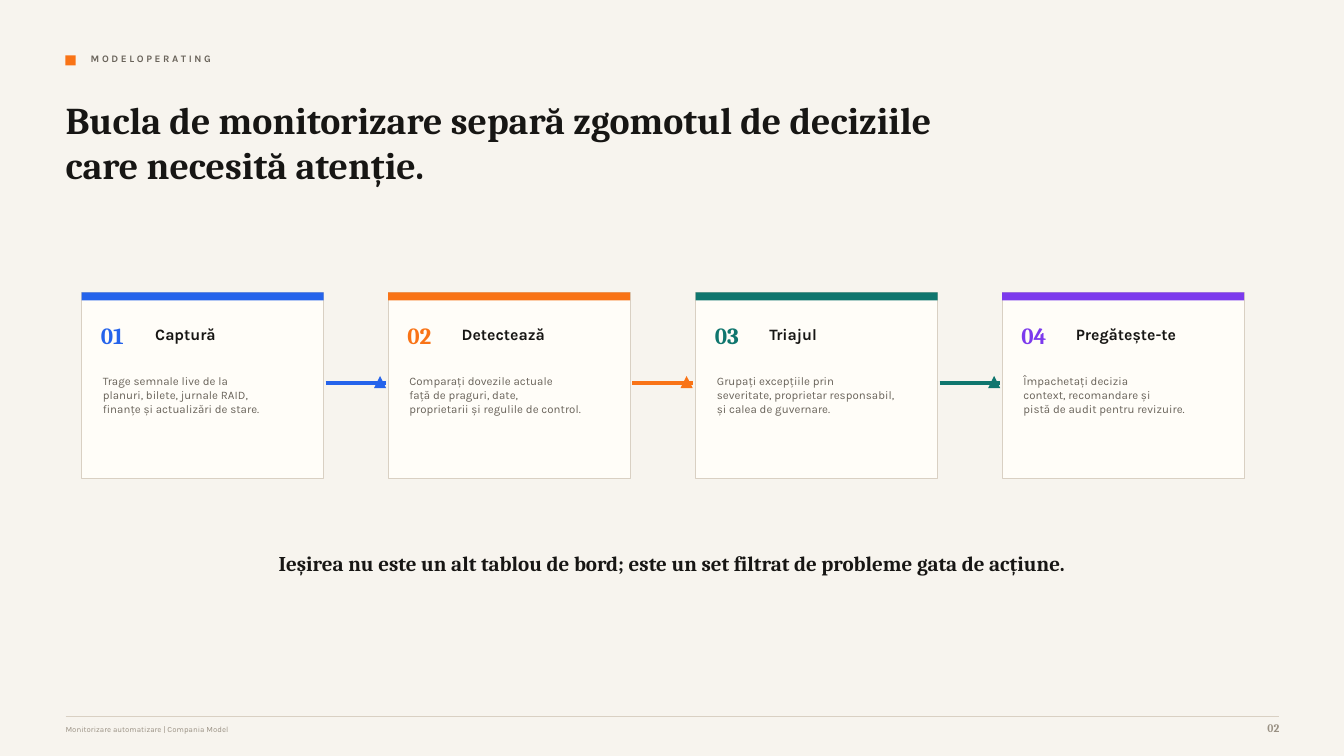
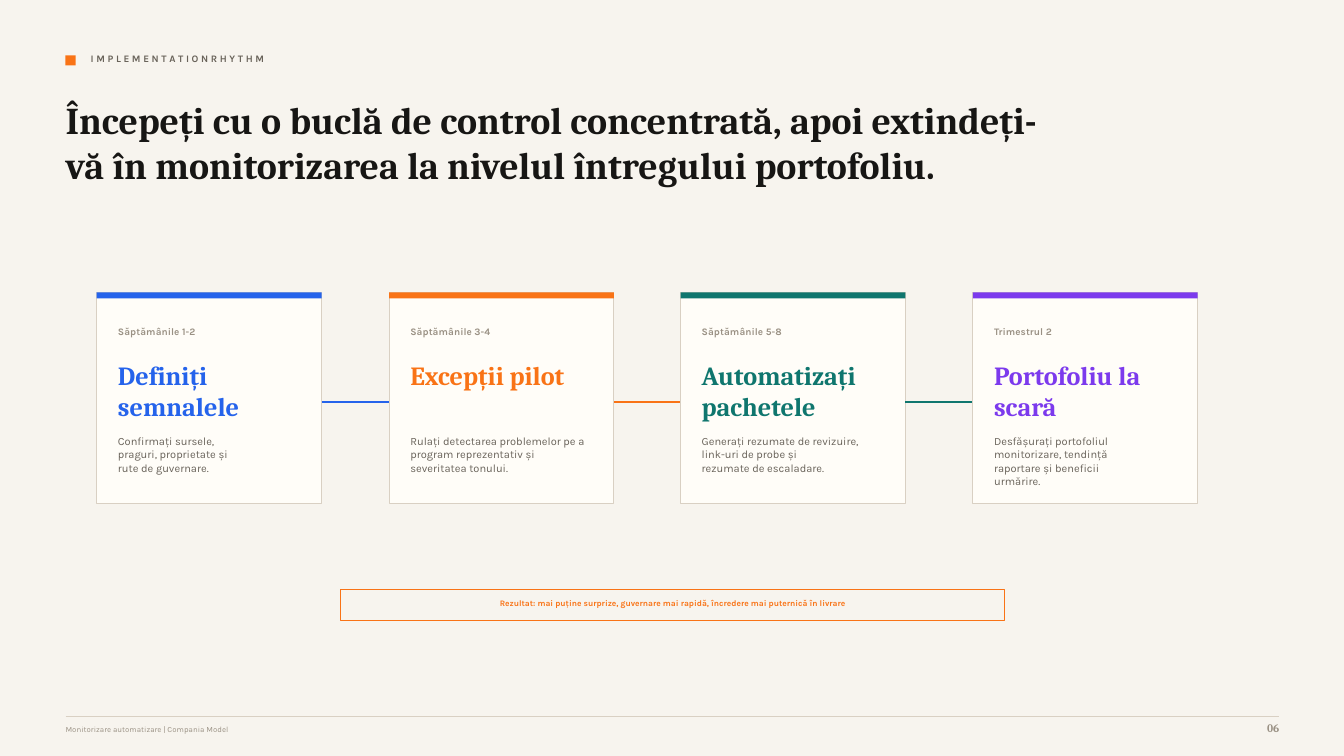
from dataclasses import dataclass

from lxml import etree
from pptx import Presentation
from pptx.dml.color import RGBColor
from pptx.enum.shapes import MSO_CONNECTOR, MSO_SHAPE
from pptx.enum.text import MSO_ANCHOR, MSO_AUTO_SIZE, PP_ALIGN
from pptx.oxml.ns import qn
from pptx.util import Emu, Pt

RECTANGLE, TRIANGLE = MSO_SHAPE.RECTANGLE, MSO_SHAPE.ISOSCELES_TRIANGLE
STRAIGHT = MSO_CONNECTOR.STRAIGHT
LEFT, CENTER, RIGHT = PP_ALIGN.LEFT, PP_ALIGN.CENTER, PP_ALIGN.RIGHT
TOP = MSO_ANCHOR.TOP
NO_AUTOFIT = MSO_AUTO_SIZE.NONE

EMU_PER_PX = 9144  # 100 px to the inch
SLIDE_WIDTH, SLIDE_HEIGHT = 1333, 750
MARGIN, CONTENT_RIGHT = 65, 1269
CARD_TOP = 290
TITLE_LAYOUT = 5  # title only

SERIF, SANS = "Cambria", "Karla"
COLOURS = {
    "background": "F7F4EE", "card": "FFFDF8", "border": "D9D0C3",
    "ink": "171614", "body": "69635A", "muted": "9A9184",
    "blue": "2563EB", "orange": "F97316", "green": "0F766E", "violet": "7C3AED",
}
ACCENTS = ("blue", "orange", "green", "violet")
FOOTER = "Monitorizare automatizare | Compania Model"


@dataclass(frozen=True)
class Step:
    label: str
    heading: str
    body: str


@dataclass(frozen=True)
class TextPart:
    """A text area inside a card, relative to the card's left edge."""
    left: int
    top: int
    width: int
    height: int
    size: float
    font: str = SANS
    bold: bool = True
    colour: str | None = None  # None takes the card's accent


@dataclass(frozen=True)
class CardRow:
    first_left: int
    last_left: int
    width: int
    height: int
    band_height: int
    link_y: int
    link_gap: int
    link_length: int
    link_weight: float
    arrow_size: int
    label: TextPart
    heading: TextPart
    body: TextPart


LOOP_ROW = CardRow(
    first_left=81, last_left=994, width=240, height=185, band_height=8,
    link_y=380, link_gap=2, link_length=60, link_weight=2.25, arrow_size=12,
    label=TextPart(19, 319, 46, 29, 16.5, SERIF),
    heading=TextPart(73, 322, 133, 21, 11.25, colour="ink"),
    body=TextPart(21, 371, 192, 71, 8.25, bold=False, colour="body"),
)
ROLLOUT_ROW = CardRow(
    first_left=96, last_left=965, width=223, height=210, band_height=6,
    link_y=399, link_gap=0, link_length=67, link_weight=1.5, arrow_size=0,
    label=TextPart(21, 323, 125, 17, 7.13, colour="muted"),
    heading=TextPart(21, 356, 167, 48, 18.75, SERIF),
    body=TextPart(21, 431, 173, 54, 7.9, bold=False, colour="body"),
)

LOOP_STEPS = (
    Step("01", "Captură",
         "Trage semnale live de la\nplanuri, bilete, jurnale RAID,\n"
         "finanțe și actualizări de stare."),
    Step("02", "Detectează",
         "Comparați dovezile actuale\nfață de praguri, date,\n"
         "proprietarii și regulile de control."),
    Step("03", "Triajul",
         "Grupați excepțiile prin\nseveritate, proprietar responsabil,\n"
         "și calea de guvernare."),
    Step("04", "Pregătește-te",
         "Împachetați decizia\ncontext, recomandare și\n"
         "pistă de audit pentru revizuire."),
)
ROLLOUT_STEPS = (
    Step("Săptămânile 1-2", "Definiți semnalele",
         "Confirmați sursele,\npraguri, proprietate și\nrute de guvernare."),
    Step("Săptămânile 3-4", "Excepții pilot",
         "Rulați detectarea problemelor pe a\nprogram reprezentativ și\n"
         "severitatea tonului."),
    Step("Săptămânile 5-8", "Automatizați pachetele",
         "Generați rezumate de revizuire,\nlink-uri de probe și\n"
         "rezumate de escaladare."),
    Step("Trimestrul 2", "Portofoliu la scară",
         "Desfășurați portofoliul\nmonitorizare, tendință\n"
         "raportare și beneficii\nurmărire."),
)


def px(length: int) -> Emu:
    return Emu(length * EMU_PER_PX)


def rgb(name: str) -> RGBColor:
    return RGBColor.from_string(COLOURS[name])


def write(shape, text: str, *, size: float, font: str = SANS, colour: str = "ink",
          bold: bool = True, align=LEFT, inset_top: int = 0) -> None:
    """Fill a shape with text, one paragraph for each line."""
    frame = shape.text_frame
    frame.word_wrap = True
    frame.auto_size = NO_AUTOFIT
    frame.vertical_anchor = TOP
    frame.margin_left = frame.margin_right = frame.margin_bottom = 0
    frame.margin_top = px(inset_top)
    frame.text = text
    for paragraph in frame.paragraphs:
        paragraph.alignment = align
        for run in paragraph.runs:
            run.font.name = font
            run.font.size = Pt(size)
            run.font.bold = bold
            run.font.color.rgb = rgb(colour)


def add_text(slide, left: int, top: int, width: int, height: int, text: str,
             **text_format) -> None:
    box = slide.shapes.add_textbox(px(left), px(top), px(width), px(height))
    write(box, text, **text_format)


def add_block(slide, left: int, top: int, width: int, height: int, *,
              fill: str | None = None, line: str | None = None, preset=RECTANGLE):
    shape = slide.shapes.add_shape(preset, px(left), px(top), px(width), px(height))
    shape.shadow.inherit = False
    if fill:
        shape.fill.solid()
        shape.fill.fore_color.rgb = rgb(fill)
    else:
        shape.fill.background()
    if line:
        shape.line.color.rgb = rgb(line)
        shape.line.width = Pt(0.75)
    else:
        shape.line.fill.background()
    return shape


def add_rule(slide, left: int, right: int, y: int, colour: str, weight: float) -> None:
    rule = slide.shapes.add_connector(STRAIGHT, px(left), px(y), px(right), px(y))
    rule.line.color.rgb = rgb(colour)
    rule.line.width = Pt(weight)
    etree.SubElement(rule._element.spPr, qn("a:effectLst"))


def add_frame(presentation, kicker: str, title: str, title_width: int, page: str):
    """Add a slide with the shared kicker, title and footer."""
    slide = presentation.slides.add_slide(presentation.slide_layouts[TITLE_LAYOUT])
    add_block(slide, MARGIN, 55, 10, 10, fill="orange")
    add_text(slide, 90, 52, 542, 19, kicker, size=7.13, colour="body")

    heading = slide.shapes.title
    heading.left, heading.top = px(MARGIN), px(96)
    heading.width, heading.height = px(title_width), px(105)
    write(heading, title, size=27, font=SERIF)

    add_rule(slide, MARGIN, CONTENT_RIGHT, 711, "border", 0.75)
    add_text(slide, MARGIN, 719, 792, 15, FOOTER, size=5.6, bold=False, colour="muted")
    add_text(slide, CONTENT_RIGHT - 50, 715, 50, 19, page, size=8.25, font=SERIF,
             colour="muted", align=RIGHT)
    return slide


def add_cards(slide, row: CardRow, steps: tuple[Step, ...]) -> None:
    last = len(steps) - 1
    for index, (step, accent) in enumerate(zip(steps, ACCENTS)):
        left = round(row.first_left + (row.last_left - row.first_left) * index / last)
        add_block(slide, left, CARD_TOP, row.width, row.height,
                  fill="card", line="border")
        add_block(slide, left, CARD_TOP, row.width, row.band_height, fill=accent)
        for part, text in ((row.label, step.label), (row.heading, step.heading),
                           (row.body, step.body)):
            add_text(slide, left + part.left, part.top, part.width, part.height, text,
                     size=part.size, font=part.font, bold=part.bold,
                     colour=part.colour or accent)
        if index == last:
            continue
        # Link to the next card
        start = left + row.width + row.link_gap
        end = start + row.link_length
        add_rule(slide, start, end, row.link_y, accent, row.link_weight)
        if row.arrow_size:
            add_block(slide, end - row.arrow_size, row.link_y - row.arrow_size // 2 - 1,
                      row.arrow_size, row.arrow_size, fill=accent, preset=TRIANGLE)


def add_loop_slide(presentation) -> None:
    slide = add_frame(
        presentation, "M O D E L O P E R A T I N G",
        "Bucla de monitorizare separă zgomotul de deciziile care necesită atenție.",
        906, "02")
    add_cards(slide, LOOP_ROW, LOOP_STEPS)
    add_text(slide, 177, 546, 979, 44,
             "Ieșirea nu este un alt tablou de bord; "
             "este un set filtrat de probleme gata de acțiune.",
             size=15, font=SERIF, align=CENTER)


def add_rollout_slide(presentation) -> None:
    slide = add_frame(
        presentation, "I M P L E M E N T A T I O N R H Y T H M",
        "Începeți cu o buclă de control concentrată, apoi extindeți-vă "
        "în monitorizarea la nivelul întregului portofoliu.",
        979, "06")
    add_cards(slide, ROLLOUT_ROW, ROLLOUT_STEPS)
    result = add_block(slide, 338, 585, 658, 31, line="orange")
    write(result,
          "Rezultat: mai puține surprize, guvernare mai rapidă, "
          "încredere mai puternică în livrare",
          size=6, colour="orange", align=CENTER, inset_top=8)


def main() -> None:
    presentation = Presentation()
    presentation.slide_width, presentation.slide_height = px(SLIDE_WIDTH), px(SLIDE_HEIGHT)
    background = presentation.slide_master.background.fill
    background.solid()
    background.fore_color.rgb = rgb("background")
    add_loop_slide(presentation)
    add_rollout_slide(presentation)
    presentation.save("out.pptx")


if __name__ == "__main__":
    main()
